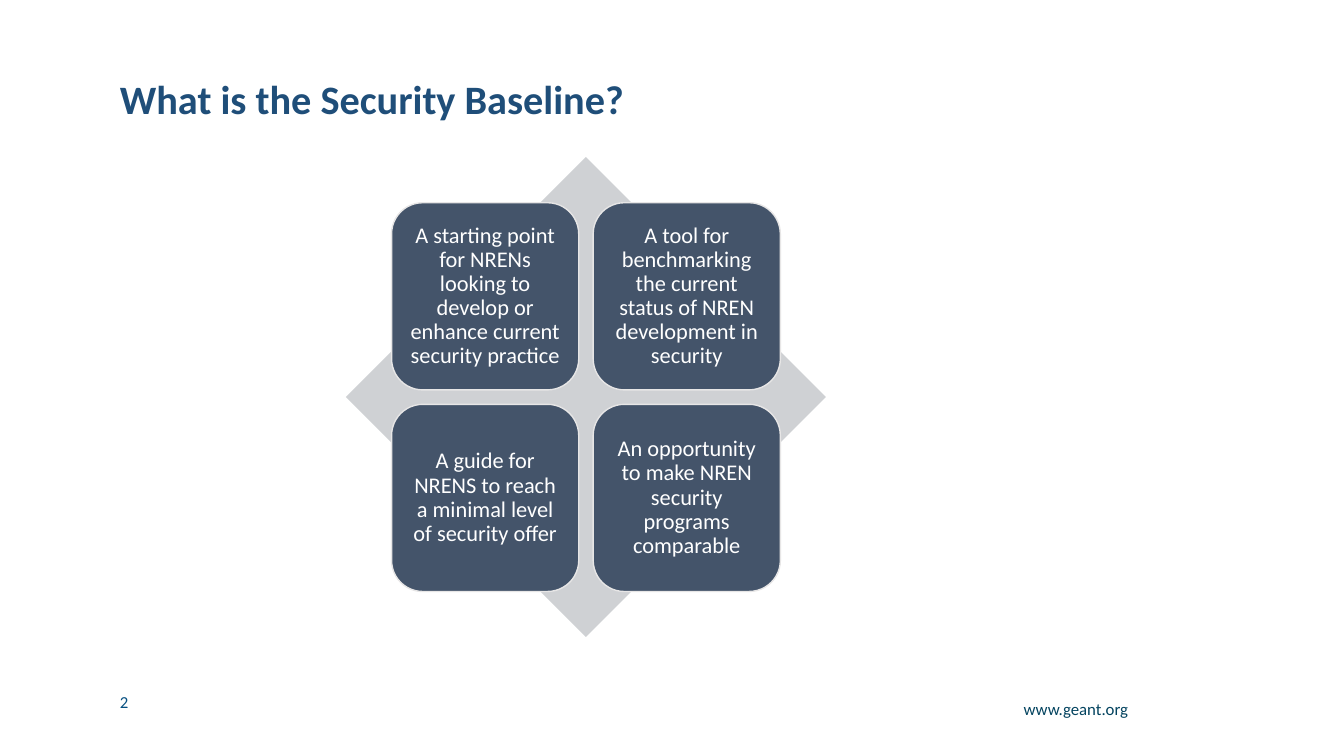
from pptx import Presentation
from pptx.dml.color import RGBColor
from pptx.enum.shapes import MSO_SHAPE as SHAPE
from pptx.enum.text import MSO_ANCHOR as ANCHOR, PP_ALIGN as ALIGN
from pptx.util import Pt

COLORS = {
    "title": "1F4E79",
    "number": "065081",
    "site": "03435F",
    "diamond": "CFD1D4",
    "card": "44546A",
    "outline": "E7E6E6",
    "card_text": "FFFFFF",
}


def rgb(name):
    return RGBColor.from_string(COLORS[name])


def write(sp, text, size, color, bold=False, align=ALIGN.LEFT,
          anchor=ANCHOR.TOP, spacing=0.9, inset=None):
    tf = sp.text_frame
    tf.word_wrap = True
    tf.vertical_anchor = anchor
    if inset is not None:
        tf.margin_left = tf.margin_right = Pt(inset)
        tf.margin_top = tf.margin_bottom = Pt(inset)
    p = tf.paragraphs[0]
    p.alignment = align
    p.line_spacing = spacing
    r = p.add_run()
    r.text = text
    r.font.name = "Calibri"
    r.font.size = Pt(size)
    r.font.bold = bold
    r.font.color.rgb = rgb(color)


prs = Presentation()
prs.slide_width, prs.slide_height = Pt(960), Pt(540)
s = prs.slides.add_slide(prs.slide_layouts[6])

# Title and footer
number = s.shapes.add_textbox(Pt(78.5), Pt(490.3), Pt(104.4), Pt(21.6))
write(number, "2", 12, "number", spacing=1.0)

site = s.shapes.add_textbox(Pt(692), Pt(497.5), Pt(121), Pt(26.6))
write(site, "www.geant.org", 12, "site", align=ALIGN.RIGHT)

title = s.shapes.add_textbox(Pt(78.5), Pt(55.4), Pt(779), Pt(33.8))
write(title, "What is the Security Baseline?", 28.8, "title", bold=True,
      anchor=ANCHOR.MIDDLE)

# Diamond behind a two by two grid of cards
diamond = s.shapes.add_shape(SHAPE.DIAMOND, Pt(247.1), Pt(112.2), Pt(342.8), Pt(342.8))
diamond.shadow.inherit = False
diamond.fill.solid()
diamond.fill.fore_color.rgb = rgb("diamond")
diamond.line.fill.background()

cards = [
    "A starting point for NRENs looking to develop or enhance current security practice",
    "A tool for benchmarking the current status of NREN development in security",
    "A guide for NRENS to reach a minimal level of security offer",
    "An opportunity to make NREN security programs comparable",
]
left, top, side, pitch = 279.7, 144.8, 133.7, 144
for i, text in enumerate(cards):
    row, col = divmod(i, 2)
    card = s.shapes.add_shape(SHAPE.ROUNDED_RECTANGLE, Pt(left + col * pitch),
                              Pt(top + row * pitch), Pt(side), Pt(side))
    card.shadow.inherit = False
    card.fill.solid()
    card.fill.fore_color.rgb = rgb("card")
    card.line.color.rgb = rgb("outline")
    card.line.width = Pt(1)
    write(card, text, 16, "card_text", align=ALIGN.CENTER,
          anchor=ANCHOR.MIDDLE, inset=4.8)

prs.save("out.pptx")
